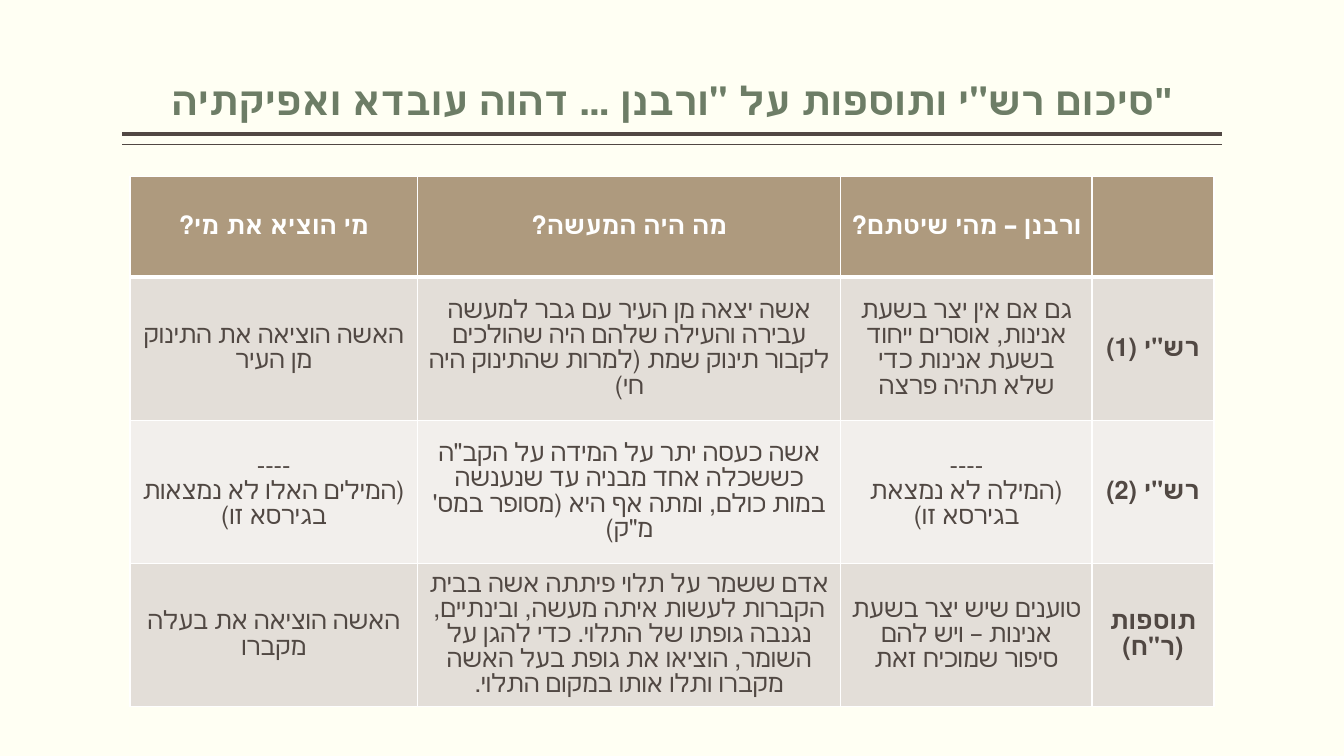
from dataclasses import dataclass

from lxml import etree
from pptx import Presentation
from pptx.dml.color import RGBColor
from pptx.enum.shapes import MSO_CONNECTOR
from pptx.enum.text import MSO_ANCHOR, PP_ALIGN
from pptx.oxml.ns import qn
from pptx.util import Inches, Pt

STRAIGHT = MSO_CONNECTOR.STRAIGHT
CENTER = PP_ALIGN.CENTER
MIDDLE, BOTTOM = MSO_ANCHOR.MIDDLE, MSO_ANCHOR.BOTTOM

TITLE = 'סיכום רש"י ותוספות על "ורבנן ... דהוה עובדא ואפיקתיה"'
HEADER = ["מי הוציא את מי?", "מה היה המעשה?", "ורבנן – מהי שיטתם?", ""]
ROWS = [
    ["האשה הוציאה את התינוק מן העיר",
     "אשה יצאה מן העיר עם גבר למעשה עבירה והעילה שלהם היה שהולכים "
     "לקבור תינוק שמת (למרות שהתינוק היה חי)",
     "גם אם אין יצר בשעת אנינות, אוסרים ייחוד בשעת אנינות כדי שלא תהיה פרצה",
     'רש"י (1)'],
    ["----\n(המילים האלו לא נמצאות בגירסא זו)",
     'אשה כעסה יתר על המידה על הקב"ה כששכלה אחד מבניה עד שנענשה '
     'במות כולם, ומתה אף היא (מסופר במס\' מ"ק)',
     "----\n(המילה לא נמצאת בגירסא זו)",
     'רש"י (2)'],
    ["האשה הוציאה את בעלה מקברו",
     "אדם ששמר על תלוי פיתתה אשה בבית הקברות לעשות איתה מעשה, ובינתיים, "
     "נגנבה גופתו של התלוי. כדי להגן על השומר, הוציאו את גופת בעל האשה "
     "מקברו ותלו אותו במקום התלוי.",
     "טוענים שיש יצר בשעת אנינות – ויש להם סיפור שמוכיח זאת",
     'תוספות (ר"ח)'],
]


@dataclass(frozen=True)
class Theme:
    background: str = "FFFFF3"
    title: str = "6D7D66"
    ink: str = "514843"
    white: str = "FFFFFF"
    header: str = "AE9A7E"
    bands: tuple = ("E3DED8", "F2EFEC")
    title_font: str = "Arial"
    table_font: str = "Lato"
    title_size: int = 28
    table_size: int = 18


THEME = Theme()
WIDTH, HEIGHT = 13.33, 7.5
MARGIN = 1.21
TITLE_TOP, TITLE_HEIGHT = 0.08, 1.2
RULES = [(1.33, 3), (1.43, 0.75)]
TABLE_LEFT, TABLE_TOP = 1.29, 1.75
COLUMNS = [2.85, 4.2, 2.49, 1.21]
ROW_HEIGHTS = [1] + [1.42] * len(ROWS)


def write(tf, text, *, font, size, color, bold=False, rtl=False, spacing=None):
    """Fill a text frame with centred paragraphs, one for each line of text."""
    for i, line in enumerate(text.split("\n")):
        p = tf.paragraphs[0] if i == 0 else tf.add_paragraph()
        p.alignment = CENTER
        if spacing:
            p.line_spacing = spacing
        if rtl:
            p._p.get_or_add_pPr().set("rtl", "1")
        if not line:
            continue
        r = p.add_run()
        r.text = line
        r.font.name, r.font.size, r.font.bold = font, Pt(size), bold
        r.font.color.rgb = RGBColor.from_string(color)


def add_rule(slide, y, weight):
    line = slide.shapes.add_connector(
        STRAIGHT, Inches(WIDTH - MARGIN), Inches(y), Inches(MARGIN), Inches(y))
    line.line.color.rgb = RGBColor.from_string(THEME.ink)
    line.line.width = Pt(weight)
    etree.SubElement(line._element.spPr, qn("a:effectLst"))


def set_borders(cell, **weights):
    """Draw white borders; weights are points for L, R, T and B, in that order."""
    tc_pr = cell._tc.get_or_add_tcPr()
    for side, weight in weights.items():
        ln = etree.SubElement(tc_pr, qn(f"a:ln{side}"), w=str(Pt(weight)))
        fill = etree.SubElement(ln, qn("a:solidFill"))
        etree.SubElement(fill, qn("a:srgbClr"), val=THEME.white)


def add_summary_table(slide):
    grid = [HEADER] + ROWS
    table = slide.shapes.add_table(
        len(grid), len(COLUMNS), Inches(TABLE_LEFT), Inches(TABLE_TOP),
        Inches(sum(COLUMNS)), Inches(sum(ROW_HEIGHTS))).table
    for column, width in zip(table.columns, COLUMNS):
        column.width = Inches(width)
    for row, height in zip(table.rows, ROW_HEIGHTS):
        row.height = Inches(height)
    for i, texts in enumerate(grid):
        is_header = i == 0
        fill = THEME.header if is_header else THEME.bands[(i - 1) % 2]
        for j, text in enumerate(texts):
            cell = table.cell(i, j)
            cell.vertical_anchor = MIDDLE
            set_borders(cell, L=1, R=1, T=3 if i == 1 else 1, B=3 if is_header else 1)
            cell.fill.solid()
            cell.fill.fore_color.rgb = RGBColor.from_string(fill)
            write(cell.text_frame, text, font=THEME.table_font, size=THEME.table_size,
                  color=THEME.white if is_header else THEME.ink,
                  bold=is_header or j == len(COLUMNS) - 1, rtl=True,
                  spacing=Pt(THEME.table_size))


def add_title(slide):
    sp = slide.shapes.add_textbox(Inches(MARGIN), Inches(TITLE_TOP),
                                  Inches(WIDTH - 2 * MARGIN), Inches(TITLE_HEIGHT))
    tf = sp.text_frame
    tf.word_wrap = True
    tf.vertical_anchor = BOTTOM
    tf.margin_left = tf.margin_right = 0
    write(tf, TITLE, font=THEME.title_font, size=THEME.title_size,
          color=THEME.title, bold=True, spacing=0.9)


def main():
    prs = Presentation()
    prs.slide_width, prs.slide_height = Inches(WIDTH), Inches(HEIGHT)
    slide = prs.slides.add_slide(prs.slide_layouts[6])
    slide.background.fill.solid()
    slide.background.fill.fore_color.rgb = RGBColor.from_string(THEME.background)
    for y, weight in RULES:
        add_rule(slide, y, weight)
    add_title(slide)
    add_summary_table(slide)
    prs.save("out.pptx")


if __name__ == "__main__":
    main()
